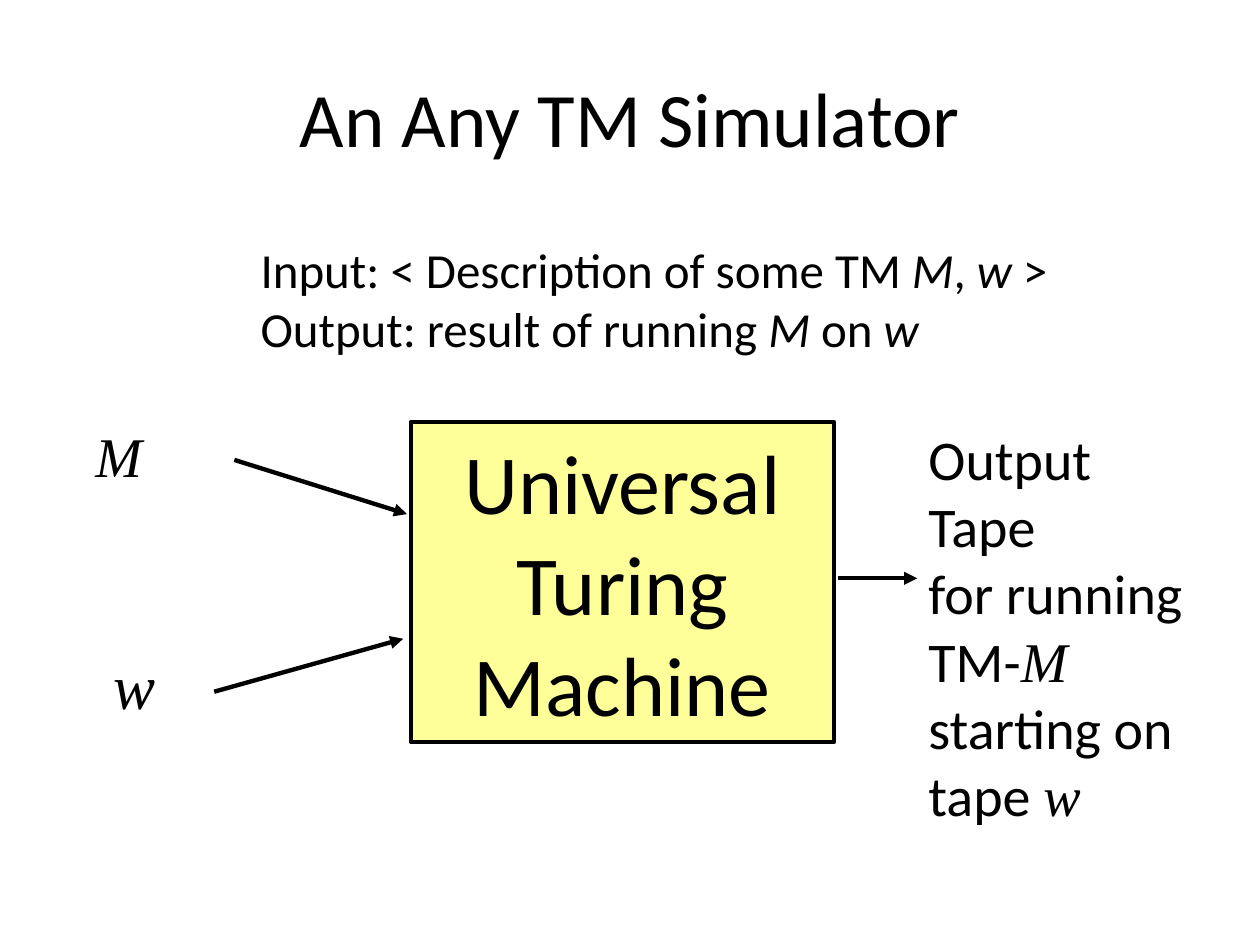
import dataclasses
import typing

import lxml.etree
import pptx
import pptx.dml.color
import pptx.enum.shapes
import pptx.enum.text
import pptx.oxml.ns
import pptx.util

ANCHOR = pptx.enum.text.MSO_ANCHOR
ALIGN = pptx.enum.text.PP_ALIGN
AUTO_SIZE = pptx.enum.text.MSO_AUTO_SIZE

# The page is a grid of square cells
COLUMNS, ROWS = 100, 75
CELL = pptx.util.Inches(0.1)


@dataclasses.dataclass(frozen=True)
class Theme:
    ink: str = "000000"
    machine: str = "FFFF99"
    sans: str = "Calibri"
    serif: str = "Times New Roman"
    title: int = 44
    label: int = 48
    summary: int = 28
    tape: int = 32
    word: int = 36
    stroke: float = 2.5


THEME = Theme()


class Span(typing.NamedTuple):
    text: str
    italic: bool = False
    font: str = THEME.sans


class Area(typing.NamedTuple):
    column: float
    row: float
    columns: float
    rows: float


class Arrow(typing.NamedTuple):
    start: tuple[float, float]
    end: tuple[float, float]


@dataclasses.dataclass(frozen=True)
class Note:
    area: Area
    size: int
    lines: list[list[Span]]
    wrap: bool = True


def cells(count: float) -> int:
    return round(count * CELL)


def color(value: str) -> pptx.dml.color.RGBColor:
    return pptx.dml.color.RGBColor.from_string(value)


def apply(target: typing.Any, values: dict[str, typing.Any]) -> None:
    for name, value in values.items():
        setattr(target, name, value)


def place(box: typing.Any, area: Area) -> None:
    names = ("left", "top", "width", "height")
    apply(box, dict(zip(names, map(cells, area))))


def write(frame: typing.Any, lines: list[list[Span]], size: int, align: typing.Any) -> None:
    for index, line in enumerate(lines):
        para = frame.add_paragraph() if index else frame.paragraphs[0]
        para.alignment = align
        for span in line:
            run = para.add_run()
            run.text = span.text
            apply(run.font, {"name": span.font, "size": pptx.util.Pt(size), "italic": span.italic})
            run.font.color.rgb = color(THEME.ink)


def outline(line: typing.Any) -> None:
    line.color.rgb = color(THEME.ink)
    line.width = pptx.util.Pt(THEME.stroke)


def add_note(page: typing.Any, note: Note) -> None:
    box = page.shapes.add_textbox(*map(cells, note.area))
    apply(box.text_frame, {"word_wrap": note.wrap, "auto_size": AUTO_SIZE.SHAPE_TO_FIT_TEXT})
    write(box.text_frame, note.lines, note.size, ALIGN.LEFT)


def add_machine(page: typing.Any, area: Area, words: list[str]) -> None:
    box = page.shapes.add_shape(pptx.enum.shapes.MSO_SHAPE.RECTANGLE, *map(cells, area))
    box.shadow.inherit = False
    box.fill.solid()
    box.fill.fore_color.rgb = color(THEME.machine)
    outline(box.line)
    apply(box.text_frame, {"word_wrap": True, "vertical_anchor": ANCHOR.MIDDLE,
                           "auto_size": AUTO_SIZE.SHAPE_TO_FIT_TEXT})
    write(box.text_frame, [[Span(word)] for word in words], THEME.label, ALIGN.CENTER)


def add_arrow(page: typing.Any, arrow: Arrow) -> None:
    line = page.shapes.add_connector(
        pptx.enum.shapes.MSO_CONNECTOR.STRAIGHT, *map(cells, arrow.start + arrow.end))
    outline(line.line)
    qn = pptx.oxml.ns.qn
    lxml.etree.SubElement(line.line._get_or_add_ln(), qn("a:tailEnd"), type="triangle")
    lxml.etree.SubElement(line._element.spPr, qn("a:effectLst"))


M = Span("M", True)
W = Span("w", True)
SERIF_M = Span("M", True, THEME.serif)
SERIF_W = Span("w", True, THEME.serif)

NOTES = [
    # What the machine takes and gives
    Note(Area(19.7, 18.5, 64.7, 10.3), THEME.summary, [
        [Span("Input: < Description of some TM "), M, Span(", "), W, Span(" >")],
        [Span("Output: result of running "), M, Span(" on "), W],
    ], wrap=False),
    # Inputs
    Note(Area(6.6, 33, 9.4, 6.3), THEME.tape, [[SERIF_M]]),
    Note(Area(8, 50.8, 5.3, 7), THEME.word, [[SERIF_W]], wrap=False),
    # Output
    Note(Area(72.7, 33.2, 26.5, 33), THEME.tape, [
        [Span("Output")],
        [Span("Tape")],
        [Span("for running")],
        [Span("TM-"), SERIF_M],
        [Span("starting on tape "), SERIF_W],
    ]),
]

ARROWS = [
    Arrow((18.6, 36.5), (32.3, 40.8)),
    Arrow((17, 54.9), (32, 50.7)),
    Arrow((66.5, 45.9), (72.8, 45.9)),
]


def main() -> None:
    deck = pptx.Presentation()
    apply(deck, {"slide_width": cells(COLUMNS), "slide_height": cells(ROWS)})
    page = deck.slides.add_slide(deck.slide_layouts.get_by_name("Title Only"))

    # Title
    title = page.shapes.title
    place(title, Area(5, 3, 90, 12.5))
    title.text_frame.vertical_anchor = ANCHOR.MIDDLE
    write(title.text_frame, [[Span("An Any TM Simulator")]], THEME.title, ALIGN.CENTER)

    # Diagram
    add_machine(page, Area(32.6, 33.5, 33.6, 25.4), ["Universal", "Turing", "Machine"])
    for note in NOTES:
        add_note(page, note)
    for arrow in ARROWS:
        add_arrow(page, arrow)

    deck.save("out.pptx")


if __name__ == "__main__":
    main()
